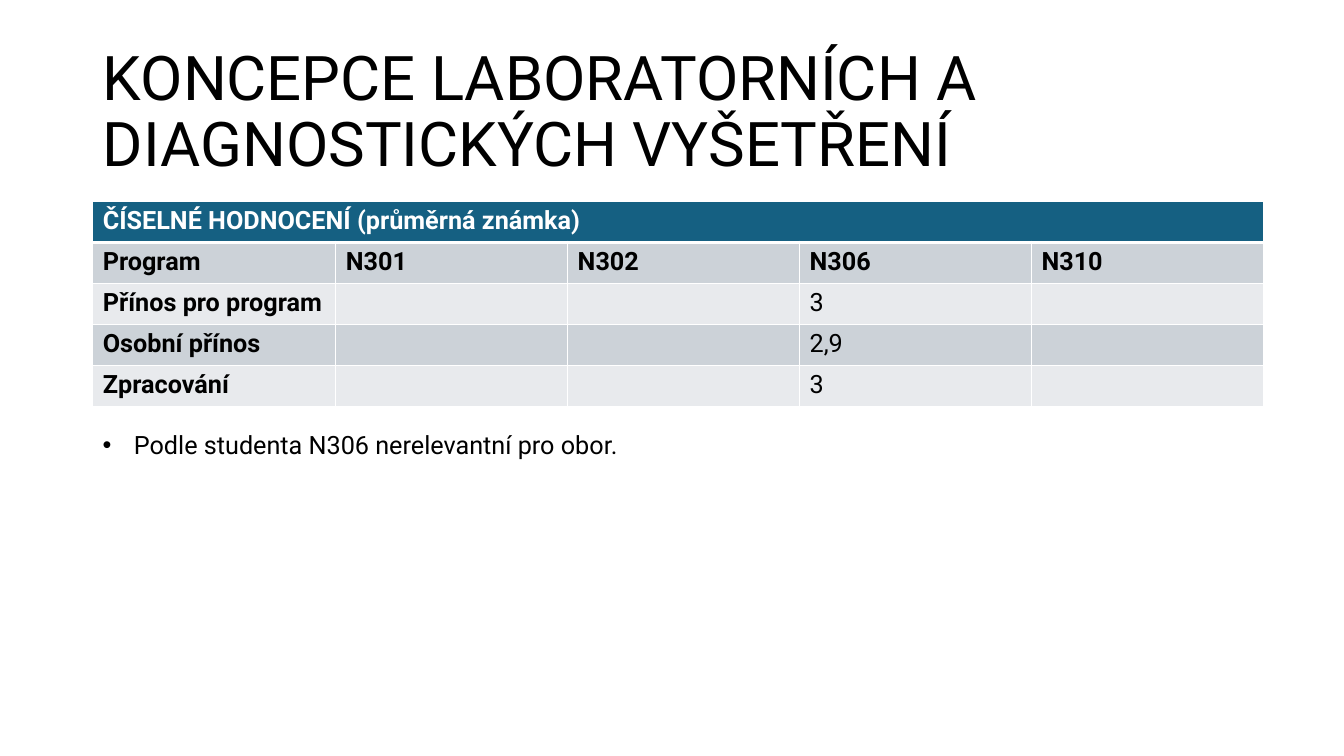
"""Build the slide with the average marks for laboratory and diagnostic tests."""
from lxml import etree
from pptx import Presentation
from pptx.dml.color import RGBColor
from pptx.enum.text import MSO_ANCHOR, PP_ALIGN
from pptx.oxml.ns import qn
from pptx.util import Inches, Pt

MIDDLE, LEFT = MSO_ANCHOR.MIDDLE, PP_ALIGN.LEFT
TITLE = "KONCEPCE LABORATORNÍCH A DIAGNOSTICKÝCH VYŠETŘENÍ"
TABLE_HEADING = "ČÍSELNÉ HODNOCENÍ (průměrná známka)"
MARKS = [
    ("Program", "N301", "N302", "N306", "N310"),
    ("Přínos pro program", "", "", "3", ""),
    ("Osobní přínos", "", "", "2,9", ""),
    ("Zpracování", "", "", "3", ""),
]
NOTE = "Podle studenta N306 nerelevantní pro obor."

FONT, BLACK, WHITE, TEAL = "Roboto", "000000", "FFFFFF", "156082"
BANDS = ("CCD2D8", "E8EAED")
LEFT_EDGE, TABLE_TOP = 0.92, 2
COLUMN_WIDTHS = [2.41] + [2.3] * 4
ROW_HEIGHT = 2.03 / 5


def rgb(value):
    """Turn a hex string into a colour."""
    return RGBColor.from_string(value)


def write(frame, text, size=18, bold=False, color=BLACK):
    """Put one formatted paragraph into a text frame and return it."""
    para = frame.paragraphs[0]
    para.alignment = LEFT
    span = para.add_run()
    span.text = text
    for name, value in {"name": FONT, "size": Pt(size), "bold": bold}.items():
        setattr(span.font, name, value)
    span.font.color.rgb = rgb(color)
    return para


def set_borders(cell, top, bottom):
    """Draw white borders around a cell, ahead of its fill."""
    properties = cell._tc.get_or_add_tcPr()
    widths = {"a:lnL": 1, "a:lnR": 1, "a:lnT": top, "a:lnB": bottom}
    for index, (tag, width) in enumerate(widths.items()):
        line = etree.Element(qn(tag), w=str(Pt(width)))
        fill = etree.SubElement(line, qn("a:solidFill"))
        etree.SubElement(fill, qn("a:srgbClr"), val=WHITE)
        properties.insert(index, line)


def add_title(page):
    """Place and format the title."""
    title = page.shapes.title
    place = {"left": LEFT_EDGE, "top": 0.4, "width": 11.5, "height": 1.45}
    for name, value in place.items():
        setattr(title, name, Inches(value))
    title.text_frame.vertical_anchor = MIDDLE
    write(title.text_frame, TITLE, 44).line_spacing = 0.9


def add_marks(page):
    """Add the table of marks under its merged heading."""
    rows = [(TABLE_HEADING, "", "", "", "")] + MARKS
    table = page.shapes.add_table(
        len(rows), len(COLUMN_WIDTHS), Inches(LEFT_EDGE), Inches(TABLE_TOP),
        Inches(sum(COLUMN_WIDTHS)), Inches(ROW_HEIGHT * len(rows))).table
    for column, width in zip(table.columns, COLUMN_WIDTHS):
        column.width = Inches(width)
    for r, values in enumerate(rows):
        for c, text in enumerate(values):
            cell = table.cell(r, c)
            cell.fill.solid()
            cell.fill.fore_color.rgb = rgb(BANDS[(r - 1) % 2] if r else TEAL)
            set_borders(cell, 3 if r == 1 else 1, 1 if r else 3)
            if text:
                write(cell.text_frame, text, bold=r < 2 or c == 0,
                      color=BLACK if r else WHITE)
    table.cell(0, 0).merge(table.cell(0, len(COLUMN_WIDTHS) - 1))


def add_note(page):
    """Add the bulleted remark below the table."""
    box = page.shapes.add_textbox(
        Inches(LEFT_EDGE), Inches(4.21), Inches(7.33), Inches(0.4))
    box.text_frame.word_wrap = True
    properties = write(box.text_frame, NOTE)._p.get_or_add_pPr()
    indent = Inches(0.31)
    properties.set("marL", str(indent))
    properties.set("indent", str(-indent))
    etree.SubElement(properties, qn("a:buFont"), typeface="Arial")
    etree.SubElement(properties, qn("a:buChar"), char="•")


def main():
    """Create and save the deck."""
    deck = Presentation()
    deck.slide_width, deck.slide_height = Inches(13.33), Inches(7.5)
    page = deck.slides.add_slide(deck.slide_layouts[5])
    add_title(page)
    add_marks(page)
    add_note(page)
    deck.save("out.pptx")


if __name__ == "__main__":
    main()
